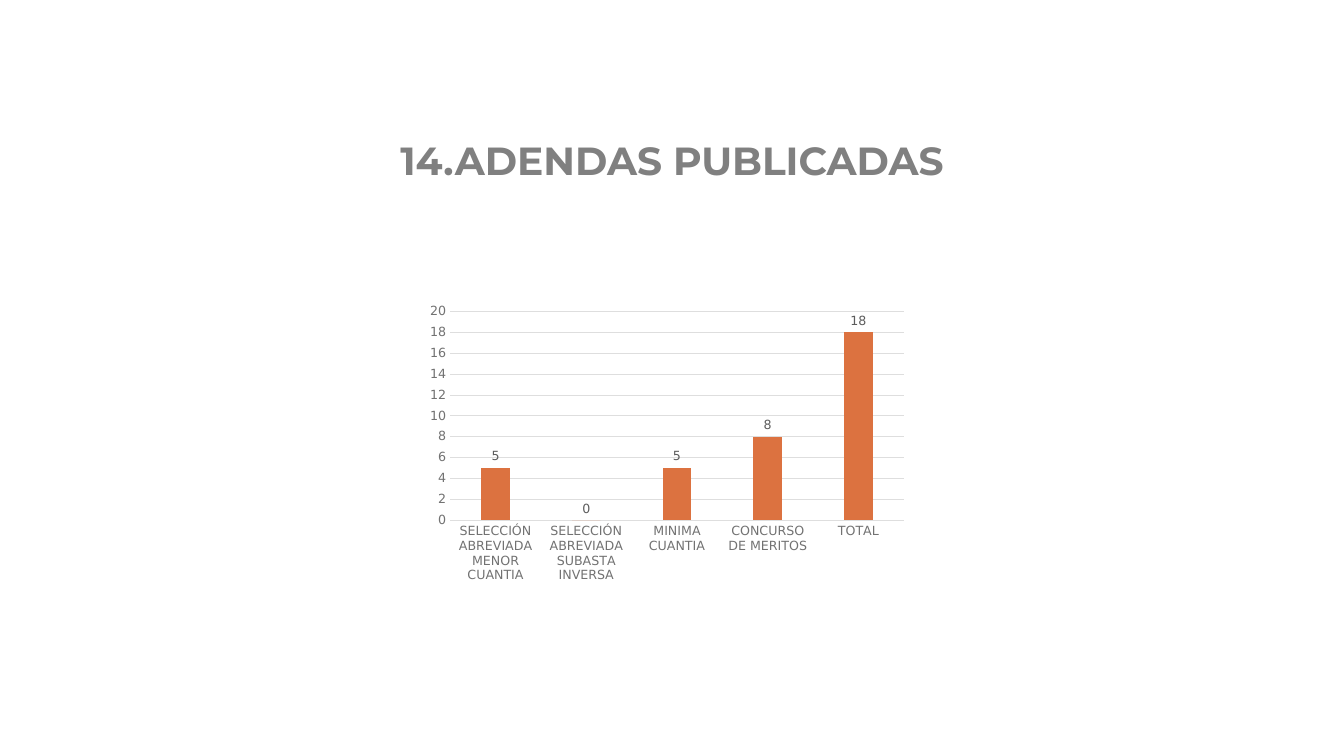
from lxml import etree
from pptx import Presentation
from pptx.chart.data import CategoryChartData
from pptx.dml.color import RGBColor
from pptx.enum.chart import XL_CHART_TYPE, XL_LABEL_POSITION, XL_TICK_MARK
from pptx.enum.text import MSO_ANCHOR, PP_ALIGN
from pptx.oxml.ns import qn
from pptx.util import Pt

COLUMN = XL_CHART_TYPE.COLUMN_CLUSTERED
OUTSIDE = XL_LABEL_POSITION.OUTSIDE_END
NO_TICK = XL_TICK_MARK.NONE
BOTTOM = MSO_ANCHOR.BOTTOM
CENTER = PP_ALIGN.CENTER

# Content
TITLE = "14.ADENDAS PUBLICADAS"
ADDENDA = {
    "SELECCIÓN ABREVIADA MENOR CUANTIA": 5,
    "SELECCIÓN ABREVIADA SUBASTA INVERSA": 0,
    "MINIMA CUANTIA": 5,
    "CONCURSO DE MERITOS": 8,
    "TOTAL": 18,
}

# Places in points; the plot area in shares of the chart
TITLE_BOX = (66, 62.5, 828, 72.5)
CHART_BOX = (300, 207.5, 360, 216)
PLOT = {"x": 0.06, "y": 0.07, "w": 0.9, "h": 0.69}
GRID = "DEDEDE"


def color(code):
    return RGBColor.from_string(code)


def set_font(font, name, size, code):
    font.name = name
    font.size = Pt(size)
    font.color.rgb = color(code)


def set_line(line, code):
    line.color.rgb = color(code)
    line.width = Pt(0.75)


def set_plot(chart):
    area = chart.plots[0]._element.getparent()
    for old in area.findall(qn("c:layout")):
        area.remove(old)
    layout = etree.Element(qn("c:layout"))
    area.insert(0, layout)
    manual = etree.SubElement(layout, qn("c:manualLayout"))
    parts = [("layoutTarget", "inner"), ("xMode", "edge"), ("yMode", "edge")]
    for tag, value in parts + list(PLOT.items()):
        etree.SubElement(manual, qn("c:" + tag)).set("val", str(value))


def add_title(slide):
    box = slide.shapes.add_textbox(*map(Pt, TITLE_BOX))
    frame = box.text_frame
    frame.word_wrap = True
    frame.vertical_anchor = BOTTOM
    para = frame.paragraphs[0]
    para.alignment = CENTER
    para.line_spacing = 0.9
    run = para.add_run()
    run.text = TITLE
    run.font.bold = True
    set_font(run.font, "Montserrat", 28, "808080")


def add_bars(slide):
    data = CategoryChartData()
    data.categories = list(ADDENDA)
    data.add_series("Series 1", list(ADDENDA.values()))
    chart = slide.shapes.add_chart(COLUMN, *map(Pt, CHART_BOX), data).chart
    chart.has_legend = False
    chart.has_title = False
    set_font(chart.font, "DejaVu Sans", 10, "262626")
    set_plot(chart)

    # Axes and grid
    cats, vals = chart.category_axis, chart.value_axis
    for axis in (cats, vals):
        axis.major_tick_mark = axis.minor_tick_mark = NO_TICK
        set_font(axis.tick_labels.font, "DejaVu Sans", 9, "727272")
    set_line(cats.format.line, GRID)
    vals.format.line.fill.background()
    vals.has_major_gridlines = True
    set_line(vals.major_gridlines.format.line, GRID)
    vals.minimum_scale, vals.maximum_scale, vals.major_unit = 0, 20, 2

    # Bars and labels
    plot = chart.plots[0]
    plot.gap_width = 219
    plot.overlap = -27
    plot.vary_by_categories = False
    bars = plot.series[0]
    bars.format.fill.solid()
    bars.format.fill.fore_color.rgb = color("DC7240")
    labels = bars.data_labels
    labels.show_value = True
    labels.position = OUTSIDE
    set_font(labels.font, "DejaVu Sans", 9, "5C5C5C")


def main():
    deck = Presentation()
    deck.slide_width, deck.slide_height = Pt(960), Pt(540)
    slide = deck.slides.add_slide(deck.slide_layouts[6])
    add_title(slide)
    add_bars(slide)
    deck.save("out.pptx")


if __name__ == "__main__":
    main()
